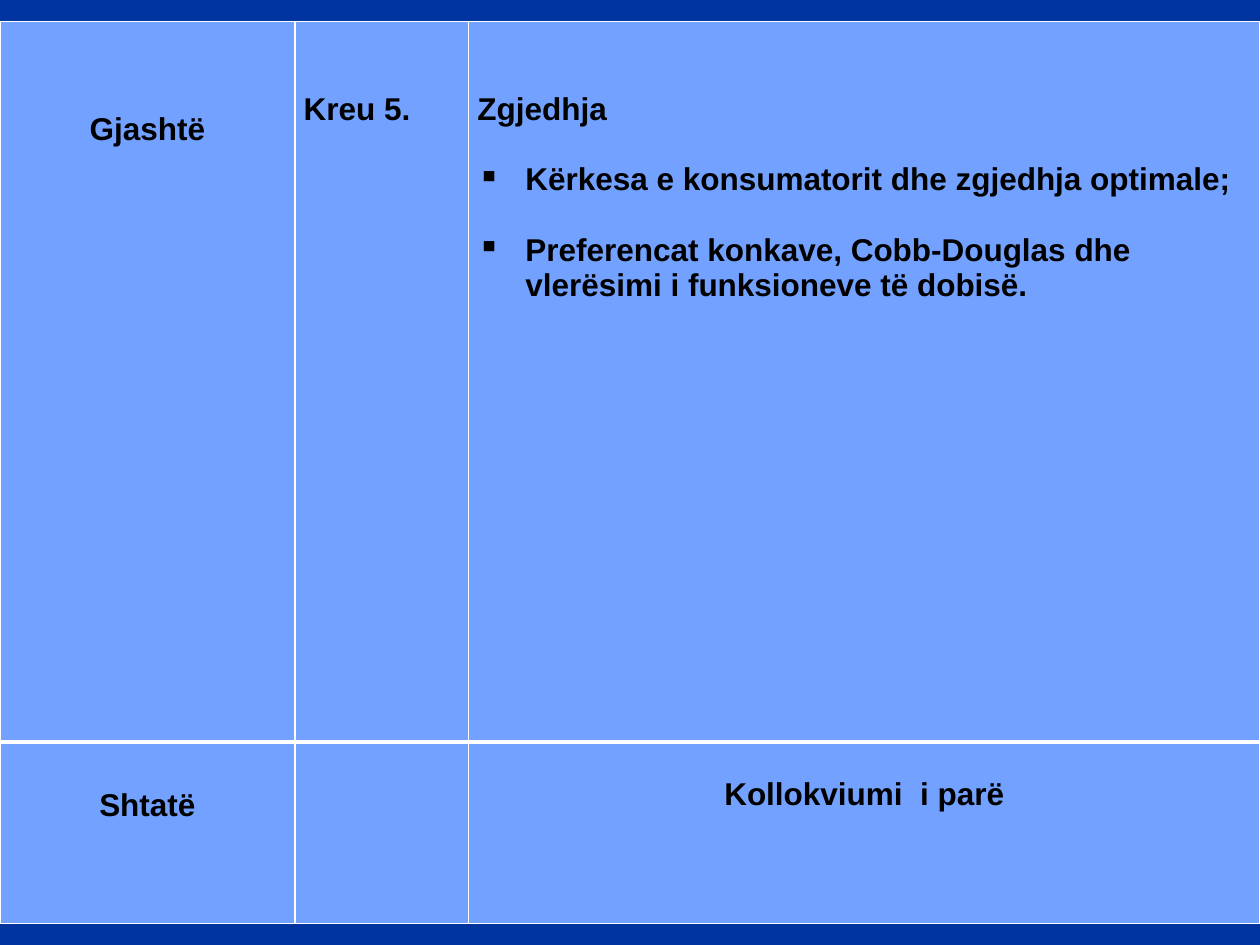
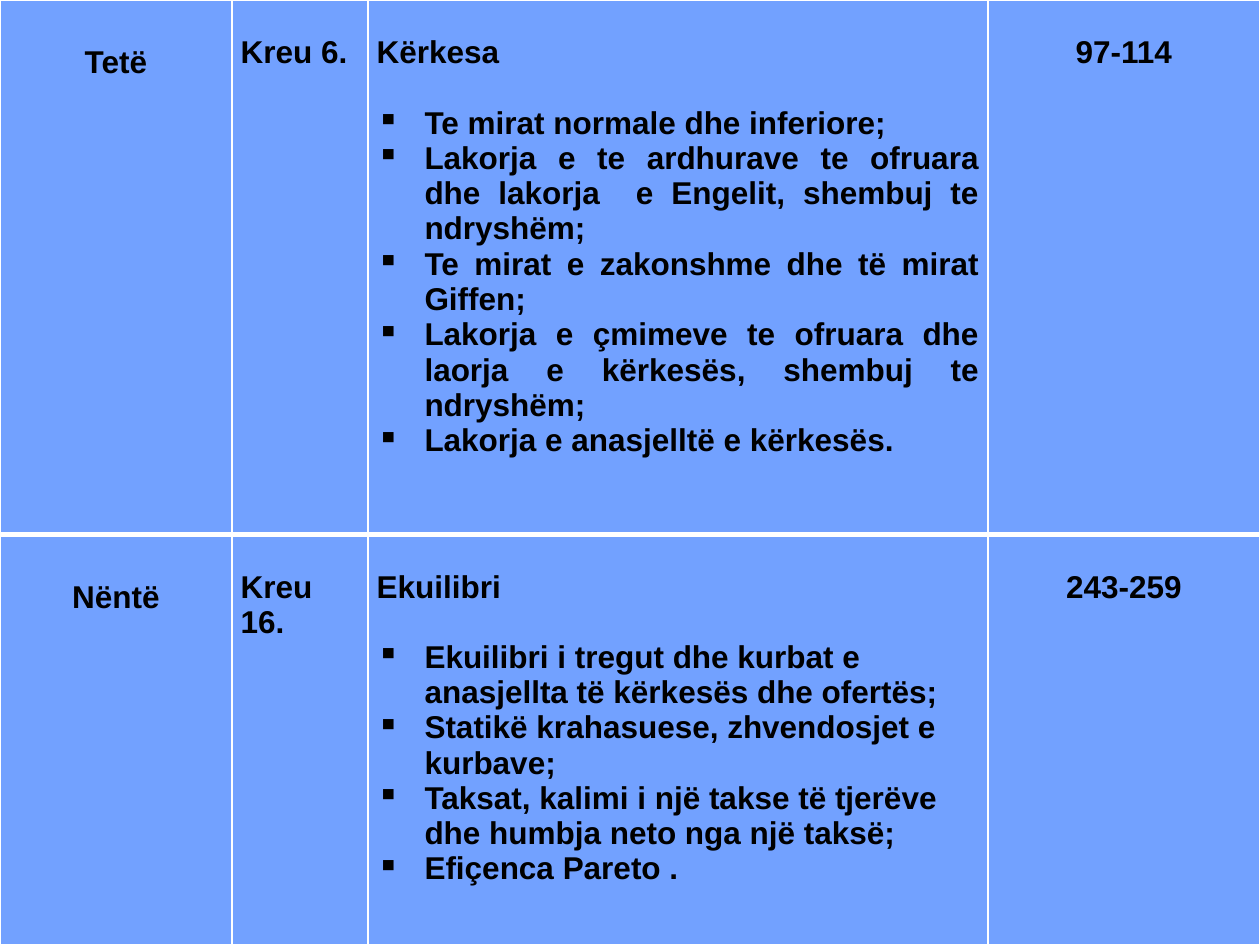
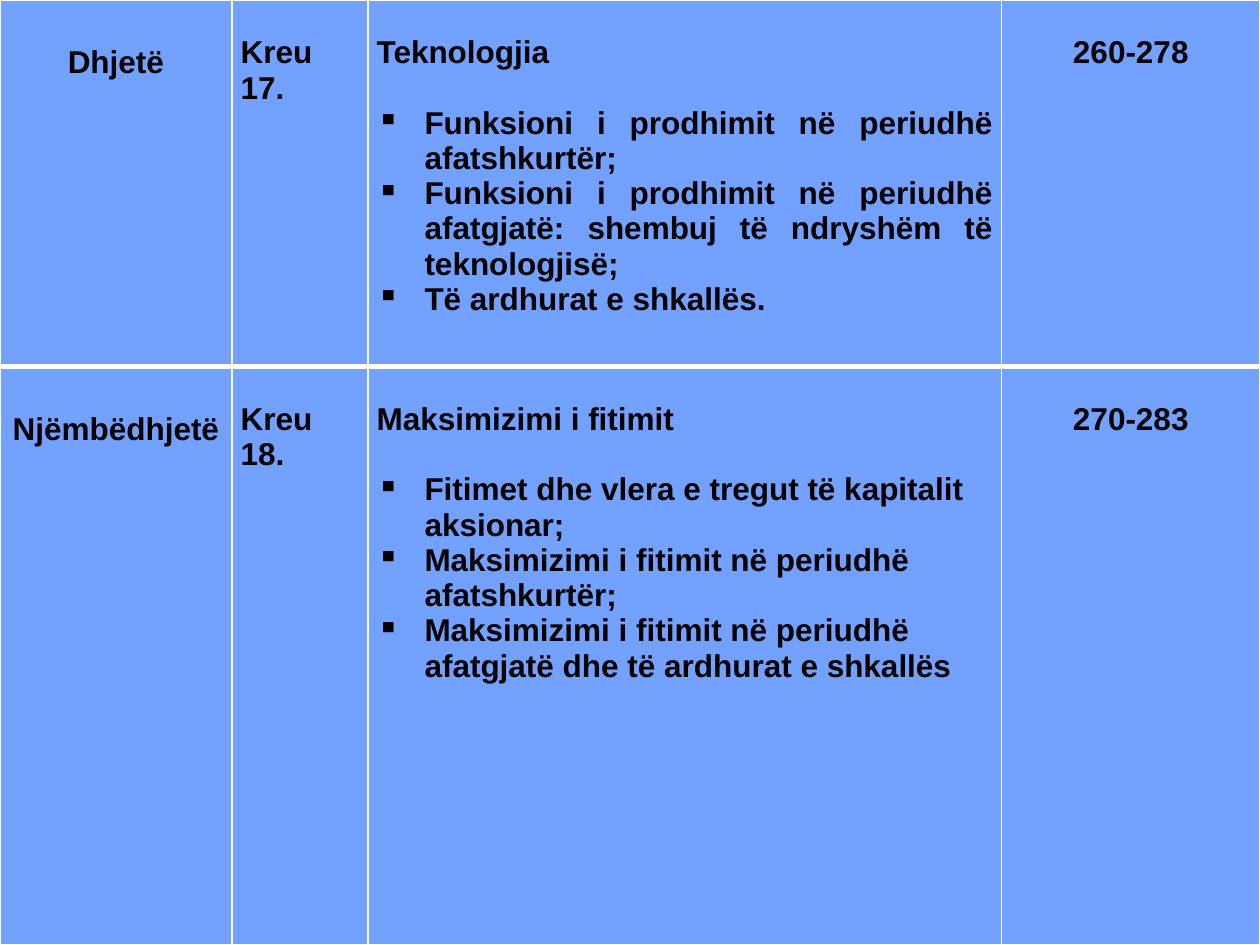
from dataclasses import dataclass

from lxml.etree import SubElement
from pptx import Presentation
from pptx.dml.color import RGBColor
from pptx.enum.text import PP_ALIGN
from pptx.oxml.ns import qn
from pptx.util import Inches, Pt


@dataclass(frozen=True)
class Theme:
    background: str = "00349E"
    cell: str = "72A1FF"
    rule: str = "FFFFFF"
    text: str = "000000"
    font: str = "Arial"
    size: int = 18
    thin: int = 1
    thick: int = 3
    line: float = 0.28
    week_line: float = 0.36
    margin: float = 0.07
    indent: float = 0.38
    gap: int = 20


THEME = Theme()
WIDTH, HEIGHT = 10, 7.5
LEFT, CENTER, JUSTIFY = PP_ALIGN.LEFT, PP_ALIGN.CENTER, PP_ALIGN.JUSTIFY

SLIDES = [
    {
        "top": 0.17,
        "cols": [2.34, 1.38, 6.28],
        "rows": [
            {"height": 5.72, "lead": 2, "week": "Gjashtë", "chapter": "Kreu 5.",
             "title": "Zgjedhja", "point_gap": THEME.gap,
             "points": ["Kërkesa e konsumatorit dhe zgjedhja optimale;",
                        "Preferencat konkave, Cobb-Douglas dhe vlerësimi i funksioneve të dobisë."]},
            {"height": 1.44, "week": "Shtatë", "chapter": "",
             "title": "Kollokviumi  i parë", "title_align": CENTER, "points": []},
        ],
    },
    {
        "top": 0,
        "cols": [1.84, 1.08, 4.92, 2.16],
        "rows": [
            {"height": 4.24, "week": "Tetë", "chapter": "Kreu 6.",
             "title": "Kërkesa", "pages": "97-114", "point_align": JUSTIFY,
             "points": ["Te mirat normale dhe inferiore;",
                        "Lakorja e te ardhurave te ofruara dhe lakorja  e Engelit, shembuj te ndryshëm;",
                        "Te mirat e zakonshme dhe të mirat Giffen;",
                        "Lakorja e çmimeve te ofruara dhe laorja e kërkesës, shembuj te ndryshëm;",
                        "Lakorja e anasjelltë e kërkesës."]},
            {"height": 3.26, "week": "Nëntë", "chapter": "Kreu 16.",
             "title": "Ekuilibri", "pages": "243-259",
             "points": ["Ekuilibri i tregut dhe kurbat e anasjellta të kërkesës dhe ofertës;",
                        "Statikë krahasuese, zhvendosjet e kurbave;",
                        "Taksat, kalimi i një takse të tjerëve dhe humbja neto nga një taksë;",
                        "Efiçenca Pareto ."]},
        ],
    },
    {
        "top": 0,
        "cols": [1.84, 1.08, 5.03, 2.05],
        "rows": [
            {"height": 2.91, "week": "Dhjetë", "chapter": "Kreu 17.",
             "title": "Teknologjia", "pages": "260-278", "point_align": JUSTIFY,
             "points": ["Funksioni i prodhimit në periudhë afatshkurtër;",
                        "Funksioni i prodhimit në periudhë afatgjatë: shembuj të ndryshëm të teknologjisë;",
                        "Të ardhurat e shkallës."]},
            {"height": 4.59, "week": "Njëmbëdhjetë", "chapter": "Kreu 18.",
             "title": "Maksimizimi i fitimit", "pages": "270-283",
             "points": ["Fitimet dhe vlera e tregut të kapitalit aksionar;",
                        "Maksimizimi i fitimit në periudhë afatshkurtër;",
                        "Maksimizimi i fitimit në periudhë afatgjatë dhe të ardhurat e shkallës"]},
        ],
    },
]


def paint(fill, color):
    fill.solid()
    fill.fore_color.rgb = RGBColor.from_string(color)


def style_cell(cell, lead, top_width, bottom_width):
    cell.margin_left = cell.margin_right = Inches(THEME.margin)
    cell.margin_top, cell.margin_bottom = Inches(lead), 0
    tc_pr = cell._tc.get_or_add_tcPr()
    widths = {"L": THEME.thin, "R": THEME.thin, "T": top_width, "B": bottom_width}
    for side, width in widths.items():
        ln = SubElement(tc_pr, qn(f"a:ln{side}"), w=str(Pt(width)))
        solid = SubElement(ln, qn("a:solidFill"))
        SubElement(solid, qn("a:srgbClr"), val=THEME.rule)
    paint(cell.fill, THEME.cell)


def write(p, text, align=LEFT, bullet=False, before=0):
    p.text = text
    if bullet:
        p_pr = p._p.get_or_add_pPr()
        indent = Inches(THEME.indent)
        p_pr.set("marL", str(indent))
        p_pr.set("indent", str(-indent))
        SubElement(p_pr, qn("a:buChar"), char="▪")
    p.alignment = align
    p.space_before = Pt(before)
    font = p.font
    font.name, font.size, font.bold = THEME.font, Pt(THEME.size), True
    font.color.rgb = RGBColor.from_string(THEME.text)


def write_topic(tf, row):
    write(tf.paragraphs[0], row["title"], row.get("title_align", LEFT))
    for i, point in enumerate(row["points"]):
        before = row.get("point_gap", 0) if i else THEME.gap
        write(tf.add_paragraph(), point, row.get("point_align", LEFT), True, before)


def add_schedule(slide, top, cols, rows):
    height = sum(row["height"] for row in rows)
    table = slide.shapes.add_table(
        len(rows), len(cols), 0, Inches(top), Inches(WIDTH), Inches(height)).table
    table.first_row = table.horz_banding = False
    for column, width in zip(table.columns, cols):
        column.width = Inches(width)
    for r, row in enumerate(rows):
        table.rows[r].height = Inches(row["height"])
        top_width = THEME.thick if r else THEME.thin
        bottom_width = THEME.thin if r == len(rows) - 1 else THEME.thick
        for c, cell in enumerate(table.rows[r].cells):
            line = THEME.line if c else THEME.week_line
            style_cell(cell, row.get("lead", 1) * line, top_width, bottom_width)
            p = cell.text_frame.paragraphs[0]
            if c == 0:
                write(p, row["week"], CENTER)
            elif c == 1:
                write(p, row["chapter"])
            elif c == 2:
                write_topic(cell.text_frame, row)
            else:
                write(p, row["pages"], CENTER)


def main():
    prs = Presentation()
    prs.slide_width, prs.slide_height = Inches(WIDTH), Inches(HEIGHT)
    paint(prs.slide_master.background.fill, THEME.background)
    for content in SLIDES:
        slide = prs.slides.add_slide(prs.slide_layouts[6])
        add_schedule(slide, **content)
    prs.save("out.pptx")


if __name__ == "__main__":
    main()
